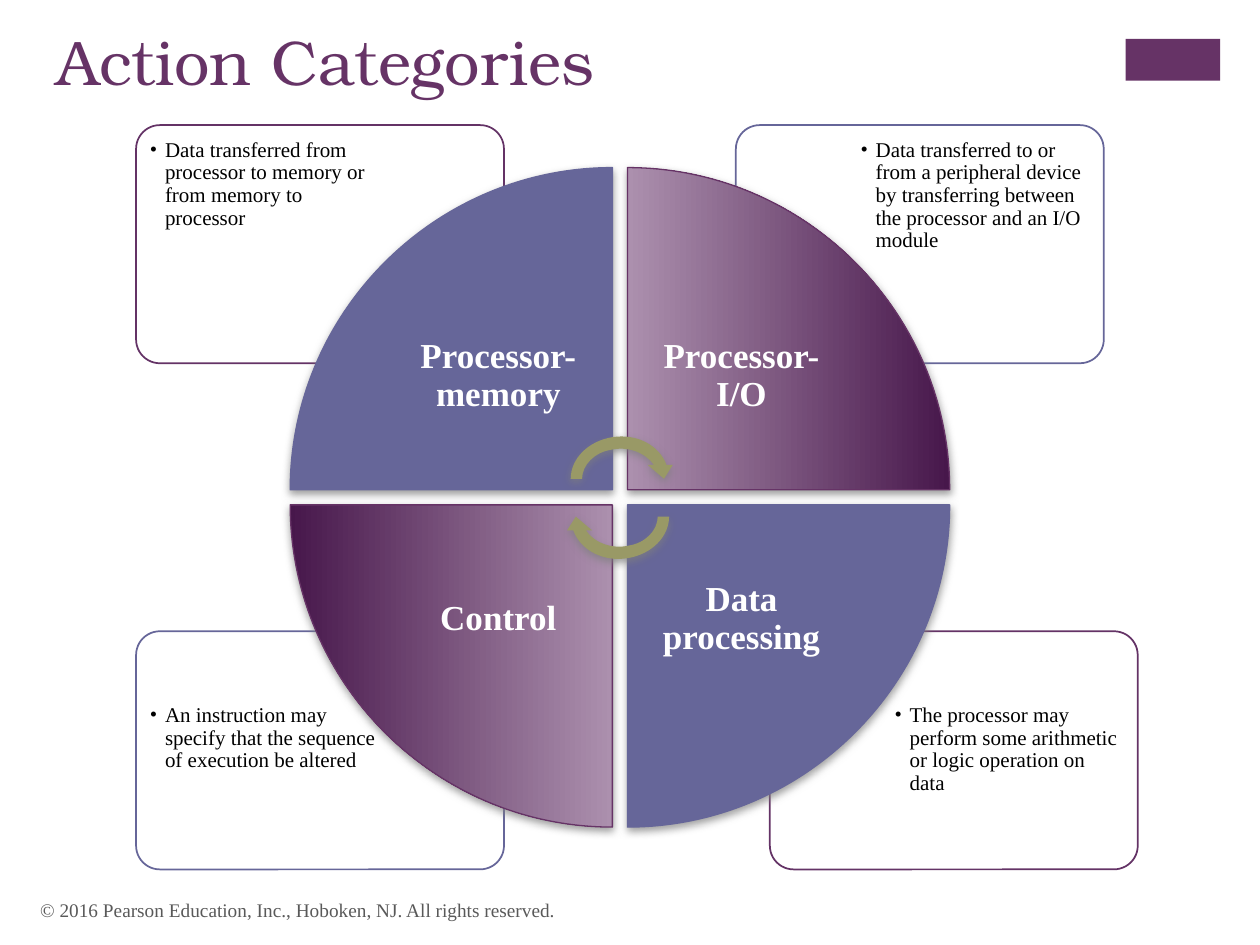
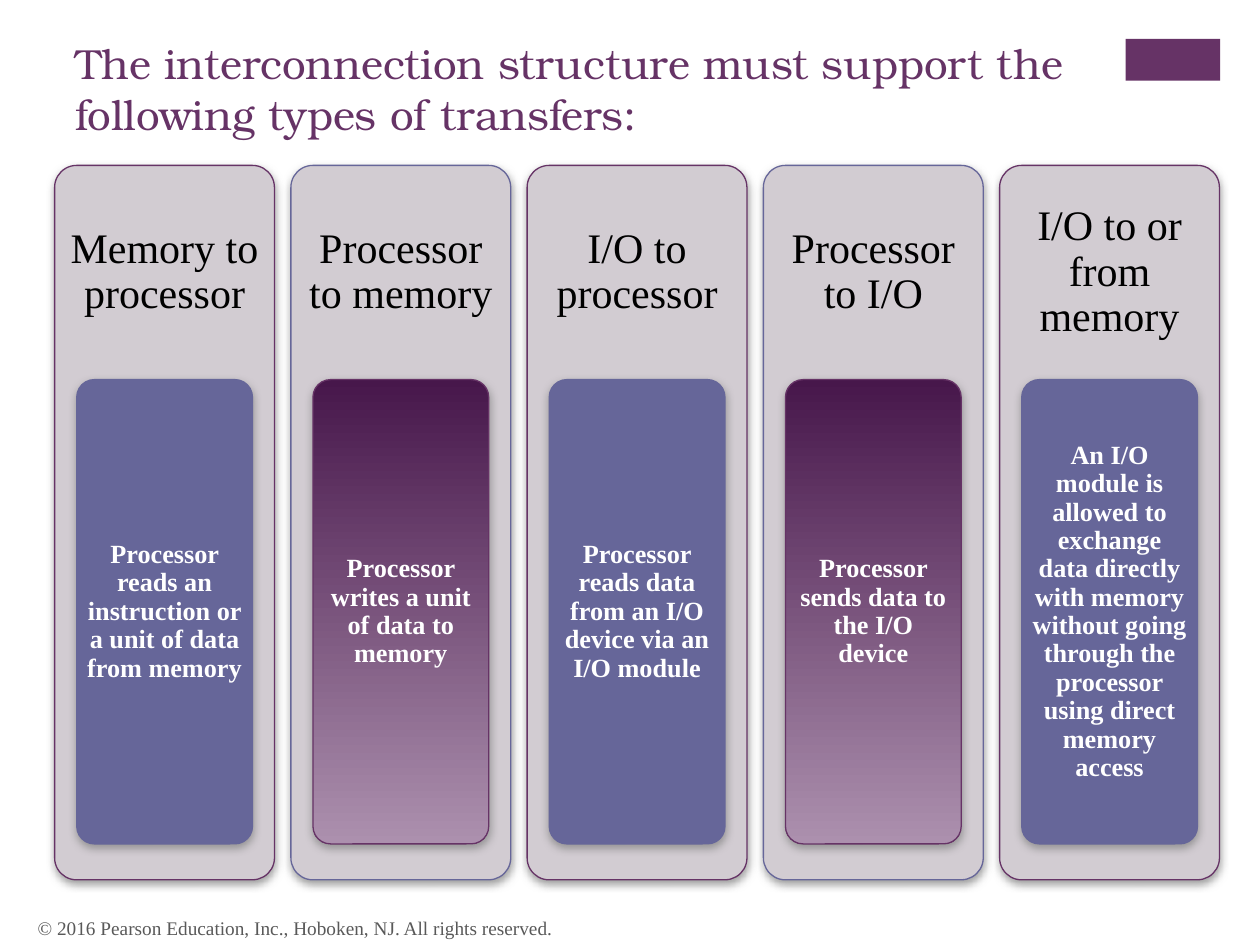
import dataclasses
import typing

import lxml.etree
import pptx
import pptx.dml.color
import pptx.enum.shapes
import pptx.enum.text
import pptx.oxml.ns
import pptx.util

RGB = pptx.dml.color.RGBColor
PLUM = RGB(0x66, 0x33, 0x66)
CARD_PLUM = RGB(0x64, 0x33, 0x66)
SLATE = RGB(0x66, 0x66, 0x99)
OLIVE = RGB(0x99, 0x99, 0x66)
MIST = RGB(0xD2, 0xCC, 0xD2)
DARK_PURPLE = RGB(0x47, 0x17, 0x4B)
LIGHT_PURPLE = RGB(0xAC, 0x90, 0xAE)
SHADOW_GREY = RGB(0x80, 0x80, 0x80)
FOOTER_GREY = RGB(0x59, 0x59, 0x59)
BLACK = RGB(0, 0, 0)
WHITE = RGB(0xFF, 0xFF, 0xFF)

TITLE_FONT, BODY_FONT = "TeX Gyre Bonum", "Times New Roman"
FOOTER = "© 2016 Pearson Education, Inc., Hoboken, NJ. All rights reserved."
CENTER = pptx.enum.text.PP_ALIGN.CENTER
TOP, MIDDLE = pptx.enum.text.MSO_ANCHOR.TOP, pptx.enum.text.MSO_ANCHOR.MIDDLE
RECTANGLE = pptx.enum.shapes.MSO_SHAPE.RECTANGLE
ROUNDED = pptx.enum.shapes.MSO_SHAPE.ROUNDED_RECTANGLE

# The page is a grid of 100 columns by 75 rows of square cells
SLIDE_WIDTH, SLIDE_HEIGHT = pptx.util.Inches(10), pptx.util.Inches(7.5)
CELL = SLIDE_WIDTH / 100


class Area(typing.NamedTuple):
    """Left, top, width and height in grid cells."""
    left: float
    top: float
    width: float
    height: float


class Outline(typing.NamedTuple):
    """Points in cells from the frame's corner; L uses one point, C three."""
    points: list[tuple[float, float]]
    segments: str


@dataclasses.dataclass(frozen=True)
class TextStyle:
    size: float
    color: RGB
    font: str = BODY_FONT
    bold: bool = False
    align: typing.Optional[int] = None
    anchor: int = TOP
    spacing: typing.Optional[float] = None
    inset_x: float = 1
    inset_y: float = 0.5
    bullet: bool = False


@dataclasses.dataclass(frozen=True)
class Paint:
    """A plain fill, or a purple gradient from the top when fill is None."""
    fill: typing.Optional[RGB] = None
    line: typing.Optional[RGB] = None
    line_width: float = 0.75
    opacity: int = 100
    shadow: bool = False


@dataclasses.dataclass(frozen=True)
class Quadrant:
    """One wedge of the wheel with its card; side and level are -1 or 1."""
    label: str
    detail: str
    side: int
    level: int
    turn: int
    card_left: float
    card_line: RGB
    paint: Paint


class Transfer(typing.NamedTuple):
    heading: str
    detail: str


FOOTER_STYLE = TextStyle(11, FOOTER_GREY, anchor=MIDDLE)
DETAIL_STYLE = TextStyle(12, BLACK, spacing=0.9, inset_x=0.7, inset_y=0.7, bullet=True)
WEDGE_STYLE = TextStyle(20, WHITE, bold=True, align=CENTER, anchor=MIDDLE,
                        spacing=0.9, inset_x=1.6, inset_y=1.6)
HEADING_STYLE = TextStyle(24, BLACK, align=CENTER, anchor=MIDDLE, spacing=0.9, inset_y=1)
PANEL_STYLE = TextStyle(15, WHITE, bold=True, align=CENTER, anchor=MIDDLE,
                        spacing=0.9, inset_x=0.4, inset_y=0.3)

SLATE_PAINT = Paint(SLATE, SLATE, shadow=True)
PURPLE_PAINT = Paint(line=PLUM, shadow=True)
ARROW_PAINT = Paint(OLIVE, shadow=True)

# Action Categories: wheel geometry and wording
WHEEL_X, WHEEL_Y = 49.2, 39.47
HALF_GAP, RADIUS, LABEL_SIDE = 0.6, 25.57, 18.1
CARD_WIDTH, CARD_HEIGHT = 29.2, 18.9
DETAIL_WIDTH, DETAIL_HEIGHT = 19.6, 13.3
CURVE = RADIUS * 0.45
WEDGE = Outline([(0, RADIUS), (0, CURVE), (CURVE, 0), (RADIUS, 0), (RADIUS, RADIUS)], "CL")
ARROW_FRAME = Area(44.8, 34.2, 8.8, 7.7)
ARROW_DROP = 2.9
ARROW = Outline([(0.5, 3.8), (0.5, 2.2), (1.9, 0.8), (3.8, 0.5),
                 (5.7, 0.2), (7.5, 1.1), (8.1, 2.7),
                 (8.6, 2.7), (7.9, 3.8), (6.6, 2.7), (7.1, 2.7),
                 (6.4, 1.7), (5, 1.2), (3.7, 1.5),
                 (2.4, 1.7), (1.4, 2.7), (1.4, 3.8)], "CCLLLLCC")
QUADRANTS = [
    Quadrant("Processor-memory",
             "Data transferred from processor to memory or from memory to processor",
             -1, -1, 0, 10.8, CARD_PLUM, SLATE_PAINT),
    Quadrant("Processor-I/O",
             "Data transferred to or from a peripheral device by transferring "
             "between the processor and an I/O module",
             1, -1, 90, 58.4, SLATE, PURPLE_PAINT),
    Quadrant("Data processing",
             "The processor may perform some arithmetic or logic operation on data",
             1, 1, 180, 61.1, CARD_PLUM, SLATE_PAINT),
    Quadrant("Control",
             "An instruction may specify that the sequence of execution be altered",
             -1, 1, 270, 10.8, SLATE, PURPLE_PAINT),
]
CARD_ORDER = (2, 3, 1, 0)

# Transfers: column geometry and wording
COLUMN = Area(4.34, 13.13, 17.45, 56.7)
COLUMN_PITCH = 18.75
HEADING_HEIGHT = 17
PANEL_INSET, PANEL_HEIGHT, PANEL_PADDING = 1.75, 36.85, 0.4
TRANSFERS = [
    Transfer("Memory to processor",
             "Processor reads an instruction or a unit of data from memory"),
    Transfer("Processor to memory", "Processor writes a unit of data to memory"),
    Transfer("I/O to processor",
             "Processor reads data from an I/O device via an I/O module"),
    Transfer("Processor to I/O", "Processor sends data to the I/O device"),
    Transfer("I/O to or from memory",
             "An I/O module is allowed to exchange data directly with memory "
             "without going through the processor using direct memory access"),
]


# Helpers
def cells(count: float) -> int:
    return round(count * CELL)


def set_all(target: typing.Any, values: dict) -> None:
    for name, value in values.items():
        setattr(target, name, value)


def add_node(parent: typing.Any, tag: str, **attributes: typing.Any) -> typing.Any:
    return lxml.etree.SubElement(parent, pptx.oxml.ns.qn(tag),
                                 {name: str(value) for name, value in attributes.items()})


def add_bullet(para: typing.Any) -> None:
    para.level = 1
    properties = para._p.get_or_add_pPr()
    properties.set("marL", str(cells(1.2)))
    properties.set("indent", str(-cells(1.2)))
    add_node(add_node(properties, "a:buClr"), "a:srgbClr", val=BLACK)
    add_node(properties, "a:buFont", typeface=BODY_FONT)
    add_node(properties, "a:buChar", char="•")


def add_text(page: typing.Any, area: Area, text: str, style: TextStyle) -> None:
    box = page.shapes.add_textbox(*map(cells, area))
    set_all(box.text_frame, {
        "word_wrap": True, "vertical_anchor": style.anchor,
        "margin_left": cells(style.inset_x), "margin_right": cells(style.inset_x),
        "margin_top": cells(style.inset_y), "margin_bottom": cells(style.inset_y)})
    para = box.text_frame.paragraphs[0]
    set_all(para, {"alignment": style.align, "line_spacing": style.spacing})
    if style.bullet:
        add_bullet(para)
    span = para.add_run()
    span.text = text
    set_all(span.font, {"name": style.font, "size": pptx.util.Pt(style.size),
                        "bold": style.bold})
    span.font.color.rgb = style.color


def apply_paint(shape: typing.Any, paint: Paint) -> None:
    if paint.fill is None:
        shape.fill.gradient()
        shape.fill.gradient_angle = 270
        for stop, color in zip(shape.fill.gradient_stops, (DARK_PURPLE, LIGHT_PURPLE)):
            stop.color.rgb = color
    else:
        shape.fill.solid()
        shape.fill.fore_color.rgb = paint.fill
    if paint.opacity < 100:
        color_node = shape._element.spPr.find(".//" + pptx.oxml.ns.qn("a:srgbClr"))
        add_node(color_node, "a:alpha", val=paint.opacity * 1000)
    if paint.line is None:
        shape.line.fill.background()
    else:
        shape.line.color.rgb = paint.line
        shape.line.width = pptx.util.Pt(paint.line_width)
    shape.shadow.inherit = False
    if paint.shadow:
        effects = shape._element.spPr.find(pptx.oxml.ns.qn("a:effectLst"))
        outer = add_node(effects, "a:outerShdw", blurRad=pptx.util.Pt(5),
                         dist=pptx.util.Pt(2), dir=90 * 60000, rotWithShape=0)
        add_node(add_node(outer, "a:srgbClr", val=SHADOW_GREY), "a:alpha", val=75000)


def add_block(page: typing.Any, kind: int, area: Area, paint: Paint) -> None:
    shape = page.shapes.add_shape(kind, *map(cells, area))
    if kind == ROUNDED:
        shape.adjustments[0] = 0.1
    apply_paint(shape, paint)


def add_outline(page: typing.Any, frame: Area, outline: Outline, turn: int,
                paint: Paint) -> None:
    start, *rest = [(cells(x), cells(y)) for x, y in outline.points]
    builder = page.shapes.build_freeform(*start, scale=1.0)
    builder.add_line_segments(rest, close=True)
    shape = builder.convert_to_shape()
    # Measure the points from the frame rather than from the outline's own bounds
    track = shape._element.spPr.find(".//" + pptx.oxml.ns.qn("a:path"))
    for point in track.iter(pptx.oxml.ns.qn("a:pt")):
        point.set("x", str(int(point.get("x")) + shape.left))
        point.set("y", str(int(point.get("y")) + shape.top))
    track.set("w", str(cells(frame.width)))
    track.set("h", str(cells(frame.height)))
    # Join three steps into one curve wherever the outline bends
    steps = iter(track.findall(pptx.oxml.ns.qn("a:lnTo")))
    for segment in outline.segments:
        step = next(steps)
        if segment == "C":
            curve = add_node(track, "a:cubicBezTo")
            step.addprevious(curve)
            for part in (step, next(steps), next(steps)):
                curve.append(part[0])
                track.remove(part)
    set_all(shape, {"left": cells(frame.left), "top": cells(frame.top),
                    "width": cells(frame.width), "height": cells(frame.height),
                    "rotation": turn})
    apply_paint(shape, paint)


def add_page(deck: typing.Any, title: str, title_area: Area, title_size: float,
             footer_area: Area, draw: typing.Callable[[typing.Any], None]) -> None:
    page = deck.slides.add_slide(deck.slide_layouts[6])
    add_block(page, RECTANGLE, Area(89.33, 3.1, 7.5, 3.3), Paint(PLUM))
    add_text(page, title_area, title, TextStyle(title_size, PLUM, TITLE_FONT))
    draw(page)
    add_text(page, footer_area, FOOTER, FOOTER_STYLE)


# Action Categories
def draw_card(page: typing.Any, quadrant: Quadrant) -> None:
    lower = quadrant.level > 0
    card = Area(quadrant.card_left, 50.1 if lower else 9.93, CARD_WIDTH, CARD_HEIGHT)
    add_block(page, ROUNDED, card, Paint(WHITE, quadrant.card_line, 1, opacity=90))
    shift = CARD_WIDTH - DETAIL_WIDTH - 0.4 if quadrant.side > 0 else 0.4
    drop = CARD_HEIGHT - DETAIL_HEIGHT - 0.5 if lower else 0.4
    add_text(page, Area(card.left + shift, card.top + drop, DETAIL_WIDTH, DETAIL_HEIGHT),
             quadrant.detail, DETAIL_STYLE)


def square_at_corner(quadrant: Quadrant, size: float) -> Area:
    """The square of a quadrant that touches the wheel's middle."""
    return Area(WHEEL_X + quadrant.side * HALF_GAP - (size if quadrant.side < 0 else 0),
                WHEEL_Y + quadrant.level * HALF_GAP - (size if quadrant.level < 0 else 0),
                size, size)


def draw_wheel(page: typing.Any) -> None:
    for index in CARD_ORDER:
        draw_card(page, QUADRANTS[index])
    for quadrant in QUADRANTS:
        add_outline(page, square_at_corner(quadrant, RADIUS), WEDGE, quadrant.turn,
                    quadrant.paint)
        add_text(page, square_at_corner(quadrant, LABEL_SIDE), quadrant.label, WEDGE_STYLE)
    for turn, drop in ((0, 0), (180, ARROW_DROP)):
        frame = ARROW_FRAME._replace(top=ARROW_FRAME.top + drop)
        add_outline(page, frame, ARROW, turn, ARROW_PAINT)


# Types of transfers
def draw_transfers(page: typing.Any) -> None:
    for index, transfer in enumerate(TRANSFERS):
        odd = index % 2 == 1
        column = COLUMN._replace(left=COLUMN.left + index * COLUMN_PITCH)
        panel = Area(column.left + PANEL_INSET, column.top + HEADING_HEIGHT,
                     column.width - 2 * PANEL_INSET, PANEL_HEIGHT)
        inner = Area(panel.left + PANEL_PADDING, panel.top + PANEL_PADDING,
                     panel.width - 2 * PANEL_PADDING, panel.height - 2 * PANEL_PADDING)
        add_block(page, ROUNDED, column, Paint(MIST, SLATE if odd else PLUM, shadow=True))
        add_text(page, column._replace(height=HEADING_HEIGHT), transfer.heading, HEADING_STYLE)
        add_block(page, ROUNDED, panel, PURPLE_PAINT if odd else SLATE_PAINT)
        add_text(page, inner, transfer.detail, PANEL_STYLE)


def main() -> None:
    deck = pptx.Presentation()
    set_all(deck, {"slide_width": SLIDE_WIDTH, "slide_height": SLIDE_HEIGHT})
    add_page(deck, "Action Categories", Area(3.54, 1.3, 84.3, 12.2), 36,
             Area(2.2, 70.2, 67, 4), draw_wheel)
    add_page(deck, "The interconnection structure must support the following types of transfers:",
             Area(5, 2.5, 82.6, 12.2), 24, Area(2, 71.65, 67, 4), draw_transfers)
    deck.save("out.pptx")


if __name__ == "__main__":
    main()
